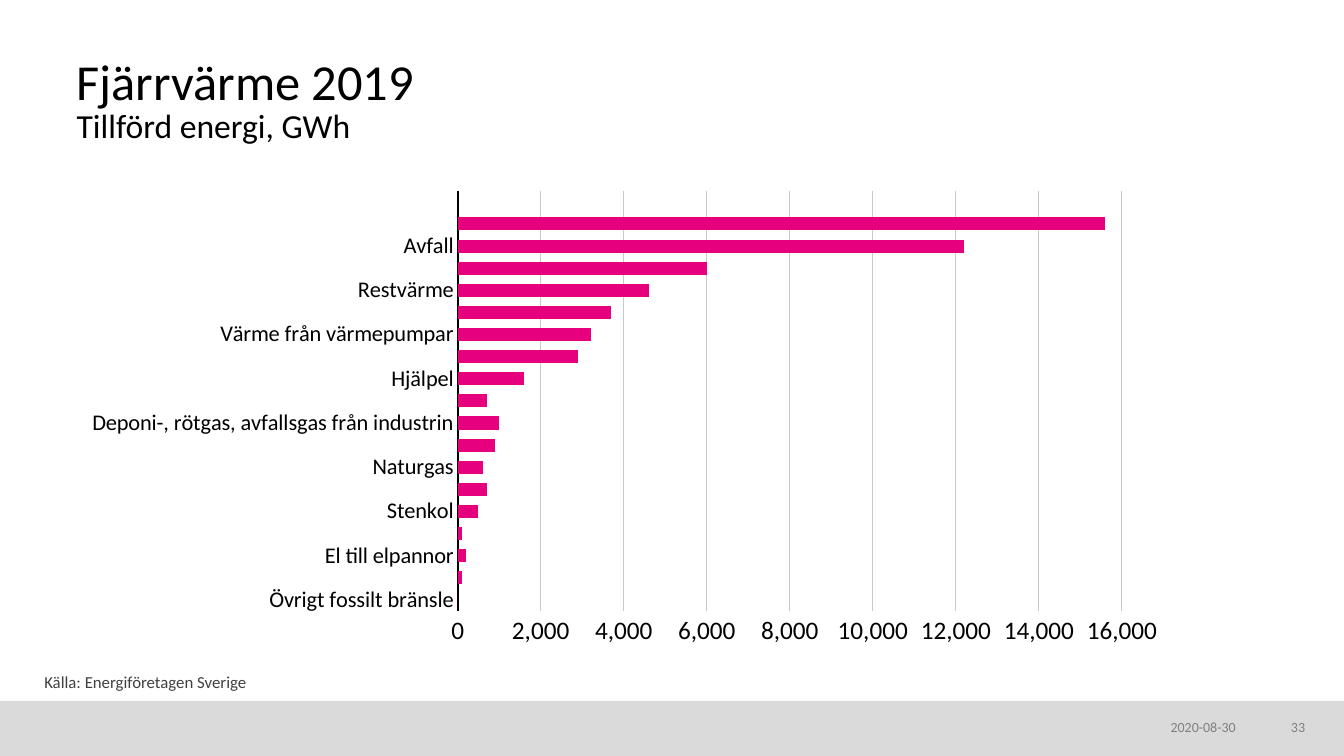
from lxml import etree
from pptx import Presentation
from pptx import util as u
from pptx.chart import data
from pptx.dml.color import RGBColor
from pptx.enum import chart as ch, shapes, text
from pptx.oxml import ns

W, H = 13.33, 7.5
FONT = "Calibri"
COLORS = {"ink": "000000", "bar": "E6007E", "grid": "C9C9C9",
          "band": "DADADA", "source": "404040", "footer": "808080"}
SUPPLY = [
    ("Övrigt fossilt bränsle", 0),
    ("Åkergrödor", 100),
    ("El till elpannor", 200),
    ("Tallbeckolja", 100),
    ("Stenkol", 500),
    ("Eldningsolja", 700),
    ("Naturgas", 600),
    ("Bioolja", 900),
    ("Deponi-, rötgas, avfallsgas från industrin", 1000),
    ("Torv", 700),
    ("Hjälpel", 1600),
    ("Träpellets, -briketter och -pulver", 2900),
    ("Värme från värmepumpar", 3200),
    ("Returträflis", 3700),
    ("Restvärme", 4600),
    ("Rökgaskondensering", 6000),
    ("Avfall", 12200),
    ("Grot, sågspån, bark, träflis", 15600),
    ("", None),
]
PLOT = {"x": 0.379, "y": 0.181, "w": 0.539, "h": 0.682}


def rgb(name):
    return RGBColor.from_string(COLORS[name])


def assign(obj, **values):
    for key, value in values.items():
        setattr(obj, key, value)


def set_font(font, size, color):
    assign(font, name=FONT, size=u.Pt(size), bold=False)
    font.color.rgb = rgb(color)


def box(x, y, w, h):
    return [u.Inches(v) for v in (x * W, y * H, w * W, h * H)]


def add_band(s, area):
    sp = s.shapes.add_shape(shapes.MSO_SHAPE.RECTANGLE, *box(*area))
    sp.shadow.inherit = False
    sp.fill.solid()
    sp.fill.fore_color.rgb = rgb("band")
    sp.line.fill.background()


def add_text(s, area, lines, color, anchor="TOP", align="LEFT", spacing=1.0):
    tf = s.shapes.add_textbox(*box(*area)).text_frame
    assign(tf, word_wrap=True, margin_left=0, margin_right=0, margin_top=0,
           margin_bottom=0, vertical_anchor=getattr(text.MSO_ANCHOR, anchor))
    p = tf.paragraphs[0]
    assign(p, alignment=getattr(text.PP_ALIGN, align), line_spacing=spacing)
    for i, (line, size) in enumerate(lines):
        if i:
            p.add_line_break()
        r = p.add_run()
        r.text = line
        set_font(r.font, size, color)


def place_plot(chart):
    area = chart._chartSpace.chart.plotArea
    for old in area.findall(ns.qn("c:layout")):
        area.remove(old)
    layout = etree.Element(ns.qn("c:layout"))
    area.insert(0, layout)
    manual = etree.SubElement(layout, ns.qn("c:manualLayout"))
    values = {"layoutTarget": "inner", "xMode": "edge", "yMode": "edge", **PLOT}
    for tag, value in values.items():
        etree.SubElement(manual, ns.qn("c:" + tag)).set("val", str(value))


def skip_labels(axis, step):
    skip = etree.Element(ns.qn("c:tickLblSkip"))
    skip.set("val", str(step))
    axis._element.find(ns.qn("c:noMultiLvlLbl")).addprevious(skip)


def add_bars(s, area):
    cd = data.CategoryChartData(number_format="#,##0")
    cd.categories = [name for name, _ in SUPPLY]
    cd.add_series("Series 1", [value for _, value in SUPPLY])
    chart = s.shapes.add_chart(ch.XL_CHART_TYPE.BAR_CLUSTERED, *box(*area), cd).chart
    assign(chart, has_legend=False, has_title=False)
    set_font(chart.font, 10, "ink")
    plot = chart.plots[0]
    assign(plot, gap_width=70, vary_by_categories=False)
    fill = plot.series[0].format.fill
    fill.solid()
    fill.fore_color.rgb = rgb("bar")

    cat, val = chart.category_axis, chart.value_axis
    for axis, size in ((cat, 16), (val, 18)):
        assign(axis, major_tick_mark=ch.XL_TICK_MARK.NONE,
               minor_tick_mark=ch.XL_TICK_MARK.NONE)
        set_font(axis.tick_labels.font, size, "ink")
    assign(val, minimum_scale=0, maximum_scale=16000, major_unit=2000,
           has_major_gridlines=True)
    assign(val.tick_labels, number_format="#,##0", number_format_is_linked=False)
    val.format.line.fill.background()
    for line, color, width in ((cat.format.line, "ink", 1.5),
                               (val.major_gridlines.format.line, "grid", 0.75)):
        line.color.rgb = rgb(color)
        line.width = u.Pt(width)
    skip_labels(cat, 2)
    place_plot(chart)


def main():
    prs = Presentation()
    assign(prs, slide_width=u.Inches(W), slide_height=u.Inches(H))
    s = prs.slides.add_slide(prs.slide_layouts[6])
    add_band(s, (0, 0.927, 1, 0.073))
    add_text(s, (0.057, 0.049, 0.89, 0.143),
             [("Fjärrvärme 2019", 36), ("Tillförd energi, GWh", 24)],
             "ink", anchor="BOTTOM", spacing=0.85)
    add_text(s, (0.033, 0.888, 0.365, 0.031),
             [("Källa: Energiföretagen Sverige", 12)],
             "source", anchor="MIDDLE", spacing=0.9)
    add_text(s, (0.871, 0.951, 0.056, 0.026), [("2020-08-30", 10)], "footer")
    add_text(s, (0.941, 0.951, 0.03, 0.026), [("33", 10)], "footer", align="RIGHT")
    add_bars(s, (-0.007, 0.105, 0.917, 0.815))
    prs.save("out.pptx")


if __name__ == "__main__":
    main()
